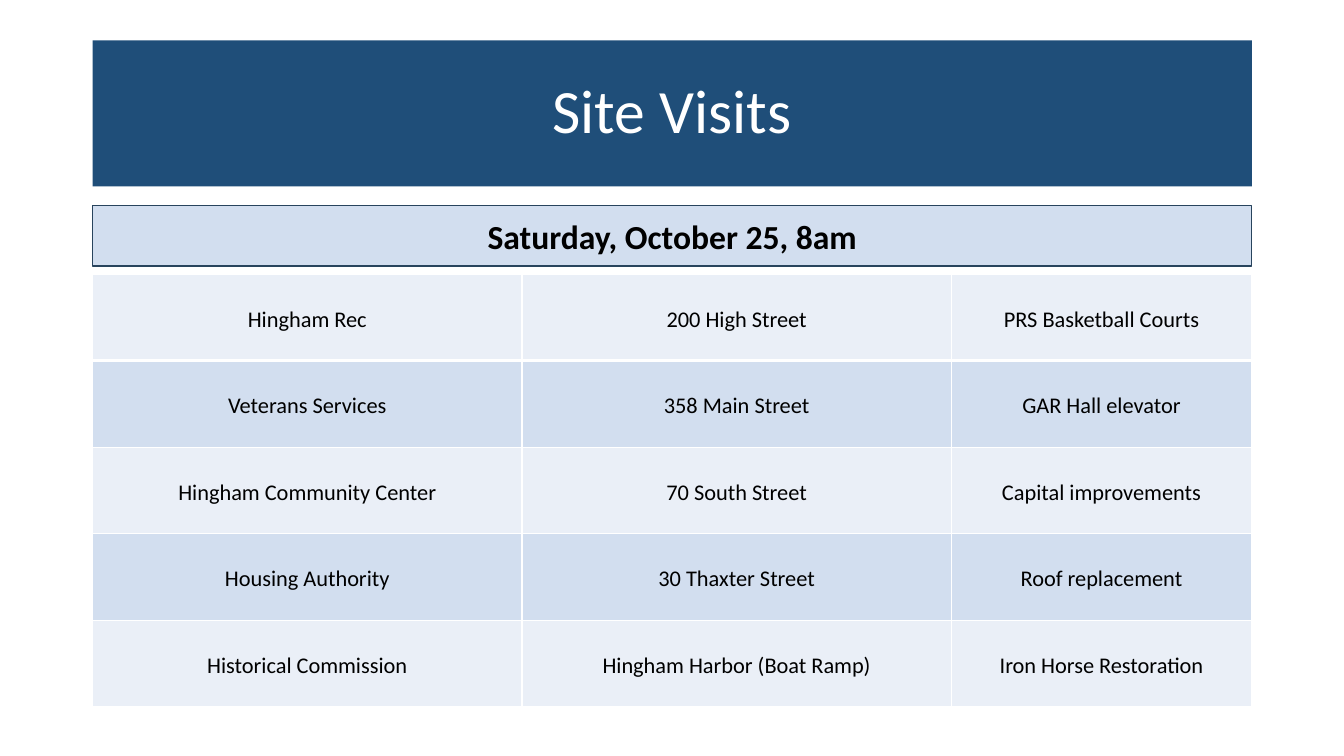
import dataclasses

import lxml.etree
import pptx
import pptx.dml.color
import pptx.enum.shapes
import pptx.enum.text
import pptx.oxml.ns
import pptx.util

Pt = pptx.util.Pt


@dataclasses.dataclass(frozen=True)
class Theme:
    font: str = "Calibri"
    navy: str = "1F4E79"
    outline: str = "28445D"
    band_light: str = "EAEFF7"
    band_dark: str = "D2DEEF"
    white: str = "FFFFFF"
    black: str = "000000"
    title_size: float = 44
    date_size: float = 24
    cell_size: float = 16


THEME = Theme()

# Shared left edge and width of all three parts
LEFT, WIDTH = 66.2, 828
COLUMN_WIDTHS = (306.7, 306.7, 214.6)
ROW_HEIGHT = 61.8

VISITS = (
    ("Hingham Rec", "200 High Street", "PRS Basketball Courts"),
    ("Veterans Services", "358 Main Street", "GAR Hall elevator"),
    ("Hingham Community Center", "70 South Street", "Capital improvements"),
    ("Housing Authority", "30 Thaxter Street", "Roof replacement"),
    ("Historical Commission", "Hingham Harbor (Boat Ramp)", "Iron Horse Restoration"),
)


def color(value):
    return pptx.dml.color.RGBColor.from_string(value)


def paint(target, value):
    target.fill.solid()
    target.fill.fore_color.rgb = color(value)


def write(frame, text, *, size, ink=THEME.black, bold=False, line_spacing=1.0, after=0):
    """Put one centred paragraph in a text frame."""
    frame.word_wrap = True
    frame.vertical_anchor = pptx.enum.text.MSO_ANCHOR.MIDDLE
    para = frame.paragraphs[0]
    para.alignment = pptx.enum.text.PP_ALIGN.CENTER
    para.line_spacing = line_spacing
    para.space_after = Pt(after)
    span = para.add_run()
    span.text = text
    span.font.name = THEME.font
    span.font.size = Pt(size)
    span.font.bold = bold
    span.font.color.rgb = color(ink)


def add_title(page, text, top, height):
    title = page.shapes.title
    title.left, title.top = Pt(LEFT), Pt(top)
    title.width, title.height = Pt(WIDTH), Pt(height)
    paint(title, THEME.navy)
    write(title.text_frame, text, size=THEME.title_size, ink=THEME.white, line_spacing=0.9)


def add_date_bar(page, text, top, height):
    bar = page.shapes.add_shape(
        pptx.enum.shapes.MSO_SHAPE.RECTANGLE, Pt(LEFT), Pt(top), Pt(WIDTH), Pt(height)
    )
    bar.shadow.inherit = False
    paint(bar, THEME.band_dark)
    bar.line.color.rgb = color(THEME.outline)
    bar.line.width = Pt(1)
    write(bar.text_frame, text, size=THEME.date_size, bold=True)


def set_borders(cell, widths):
    """Draw white borders; widths maps the side tags to points."""
    properties = cell._tc.get_or_add_tcPr()
    qualified = pptx.oxml.ns.qn
    for position, (side, width) in enumerate(widths.items()):
        border = lxml.etree.Element(qualified(f"a:{side}"), w=str(Pt(width)))
        fill = lxml.etree.SubElement(border, qualified("a:solidFill"))
        lxml.etree.SubElement(fill, qualified("a:srgbClr"), val=THEME.white)
        properties.insert(position, border)


def add_visit_table(page, visits, top):
    table = page.shapes.add_table(
        len(visits), len(COLUMN_WIDTHS), Pt(LEFT), Pt(top), Pt(WIDTH), Pt(ROW_HEIGHT * len(visits))
    ).table
    table.first_row = table.horz_banding = False
    for column, width in zip(table.columns, COLUMN_WIDTHS):
        column.width = Pt(width)
    for row_number, (row, visit) in enumerate(zip(table.rows, visits)):
        row.height = Pt(ROW_HEIGHT)
        band = THEME.band_dark if row_number % 2 else THEME.band_light
        # The rule under the first row is heavier than the others
        above = 3 if row_number == 1 else 1
        below = 3 if row_number == 0 else 1
        for cell, text in zip(row.cells, visit):
            cell.margin_left = cell.margin_right = Pt(5)
            cell.margin_top = cell.margin_bottom = Pt(0)
            cell.vertical_anchor = pptx.enum.text.MSO_ANCHOR.MIDDLE
            paint(cell, band)
            set_borders(cell, {"lnL": 1, "lnR": 1, "lnT": above, "lnB": below})
            write(cell.text_frame, text, size=THEME.cell_size, line_spacing=1.15, after=8)


def main():
    deck = pptx.Presentation()
    deck.slide_width, deck.slide_height = Pt(960), Pt(540)
    title_only = deck.slide_layouts[5]
    page = deck.slides.add_slide(title_only)
    add_title(page, "Site Visits", top=28.8, height=104.4)
    add_visit_table(page, VISITS, top=195.8)
    add_date_bar(page, "Saturday, October 25, 8am", top=146.9, height=43.2)
    deck.save("out.pptx")


if __name__ == "__main__":
    main()
